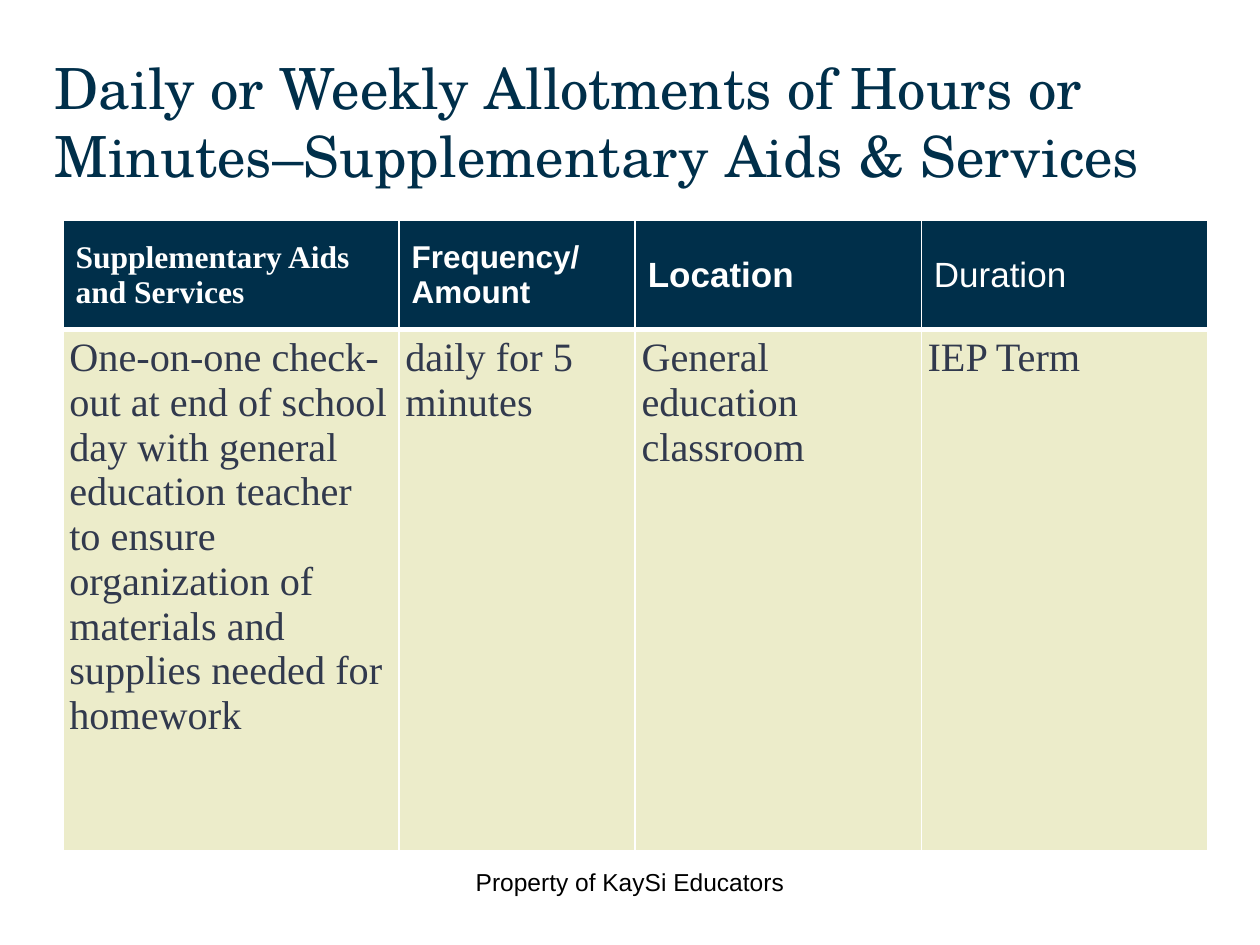
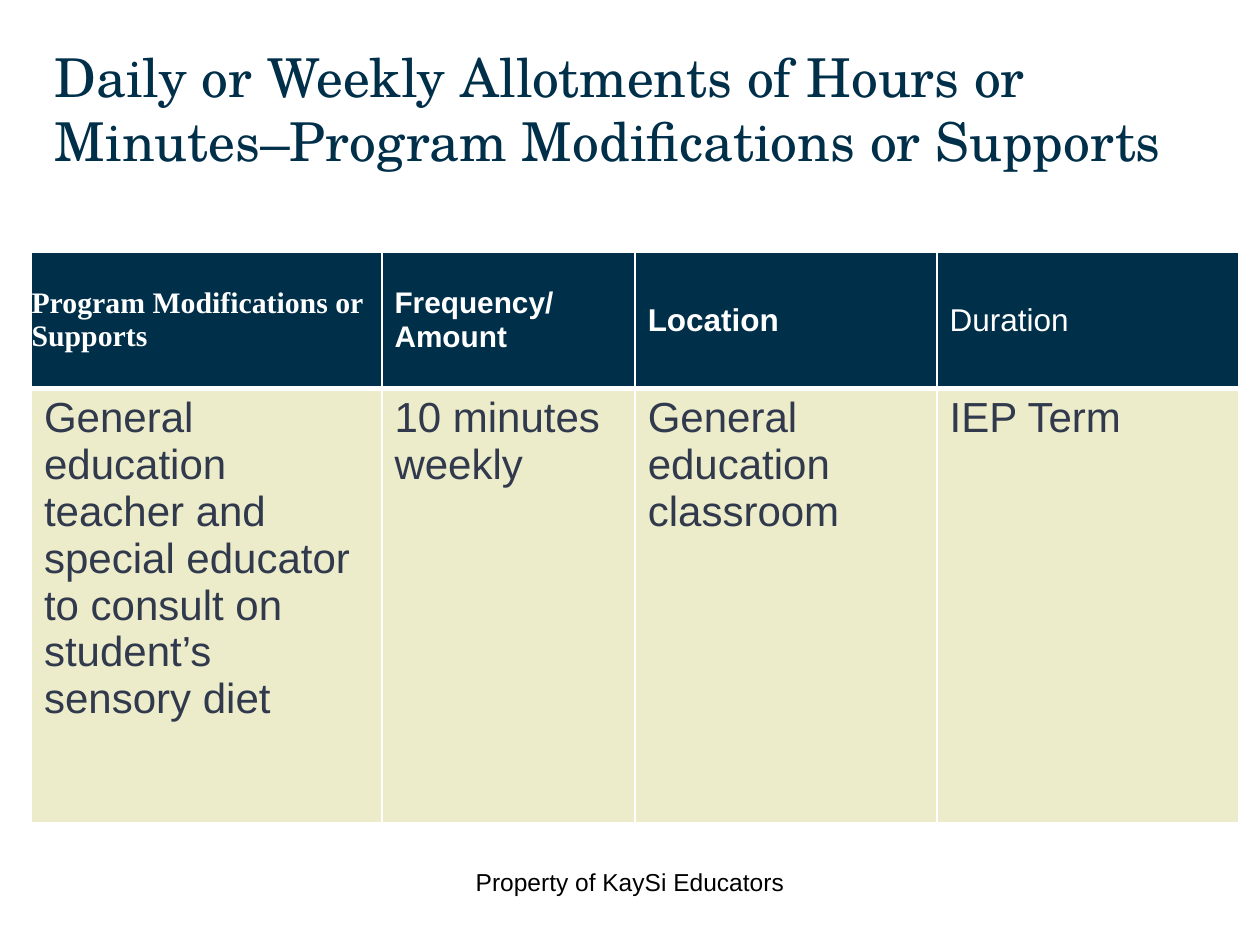
"""Build two slides of service tables with a shared title, table and footer style."""
from lxml import etree
from pptx import Presentation
from pptx.dml.color import RGBColor
from pptx.enum.text import MSO_ANCHOR, MSO_AUTO_SIZE, PP_ALIGN
from pptx.oxml.ns import qn
from pptx.util import Pt

PX = 9525
TOP, MID, LOW = MSO_ANCHOR.TOP, MSO_ANCHOR.MIDDLE, MSO_ANCHOR.BOTTOM
LEFT, CENTER = PP_ALIGN.LEFT, PP_ALIGN.CENTER
NONE = MSO_AUTO_SIZE.NONE
NAVY, CREAM, SLATE, WHITE, BLACK = "002F4A", "ECECCA", "31394D", "FFFFFF", "000000"
SANS, SERIF, SCHOLA = "Arial", "Times New Roman", "TeX Gyre Schola"
WIDE, SLIM, FLUSH = (0.1, 0.05), (0.05, 0.05), (0, 0)


def write(frame, text, size, font, tint, bold=False, align=LEFT):
    for i, line in enumerate(text.split("\n")):
        para = frame.add_paragraph() if i else frame.paragraphs[0]
        para.alignment = align
        run = para.add_run()
        run.text = line
        run.font.size = Pt(size)
        run.font.name = font
        run.font.bold = bold
        run.font.color.rgb = RGBColor.from_string(tint)


def edge(cell, side, width):
    line = etree.SubElement(cell._tc.get_or_add_tcPr(), qn("a:ln" + side), w=str(Pt(width)))
    fill = etree.SubElement(line, qn("a:solidFill"))
    etree.SubElement(fill, qn("a:srgbClr"), val=WHITE)


slides = [
    {
        "title": "Daily or Weekly Allotments of Hours or Minutes–Supplementary Aids & Services",
        "size": 32.4, "tall": 120,
        "box": (48, 168, 872, 480), "cols": (256, 180, 218, 218), "rows": (83, 397),
        "heads": [("Supplementary Aids and Services", 18, SERIF, True, WIDE),
                  ("Frequency/\nAmount", 18, SANS, True, WIDE),
                  ("Location", 20, SANS, True, WIDE),
                  ("Duration", 20, SANS, False, WIDE)],
        "style": (23, SERIF, False, SLIM),
        "body": ["One-on-one check-out at end of school day with general education teacher "
                 "to ensure organization of materials and supplies needed for homework",
                 "daily for 5 minutes", "General education classroom", "IEP Term"],
    },
    {
        "title": "Daily or Weekly Allotments of Hours or Minutes–Program Modifications or Supports",
        "size": 30.6, "tall": 107,
        "box": (24, 192, 920, 435), "cols": (267, 193, 230, 230), "rows": (104, 331),
        "heads": [("Program Modifications or Supports", 17, SERIF, True, FLUSH),
                  ("Frequency/\nAmount", 17, SANS, True, WIDE),
                  ("Location", 18, SANS, True, WIDE),
                  ("Duration", 18, SANS, False, WIDE)],
        "style": (24, SANS, False, WIDE),
        "body": ["General education teacher and special educator to consult on "
                 "student’s sensory diet",
                 "10 minutes weekly", "General education classroom", "IEP Term"],
    },
]

deck = Presentation()
deck.slide_width, deck.slide_height = 960 * PX, 720 * PX

for data in slides:
    slide = deck.slides.add_slide(deck.slide_layouts[5])

    title = slide.shapes.title
    title.left, title.top = 32 * PX, 29 * PX
    title.width, title.height = 904 * PX, data["tall"] * PX
    title.text_frame.auto_size = NONE
    title.text_frame.vertical_anchor = LOW
    write(title.text_frame, data["title"], data["size"], SCHOLA, NAVY)

    grid = slide.shapes.add_table(2, 4, *(n * PX for n in data["box"])).table
    grid.horz_banding = False
    for col, width in zip(grid.columns, data["cols"]):
        col.width = width * PX
    for row, height in zip(grid.rows, data["rows"]):
        row.height = height * PX

    body = [(text, *data["style"]) for text in data["body"]]
    looks = [(data["heads"], NAVY, WHITE, MID, (1, 1, 1, 3)),
             (body, CREAM, SLATE, TOP, (1, 1, 3, 1))]
    for r, (items, fill, tint, anchor, widths) in enumerate(looks):
        for c, (text, size, font, bold, inset) in enumerate(items):
            cell = grid.cell(r, c)
            for side, width in zip("LRTB", widths):
                edge(cell, side, width)
            cell.fill.solid()
            cell.fill.fore_color.rgb = RGBColor.from_string(fill)
            cell.vertical_anchor = anchor
            cell.margin_left = cell.margin_right = Pt(inset[0] * 72)
            cell.margin_top = cell.margin_bottom = Pt(inset[1] * 72)
            write(cell.text_frame, text, size, font, tint, bold)

    foot = slide.shapes.add_textbox(328 * PX, 656 * PX, 304 * PX, 48 * PX).text_frame
    foot.word_wrap = True
    write(foot, "Property of KaySi Educators", 14, SANS, BLACK, align=CENTER)

deck.save("out.pptx")
